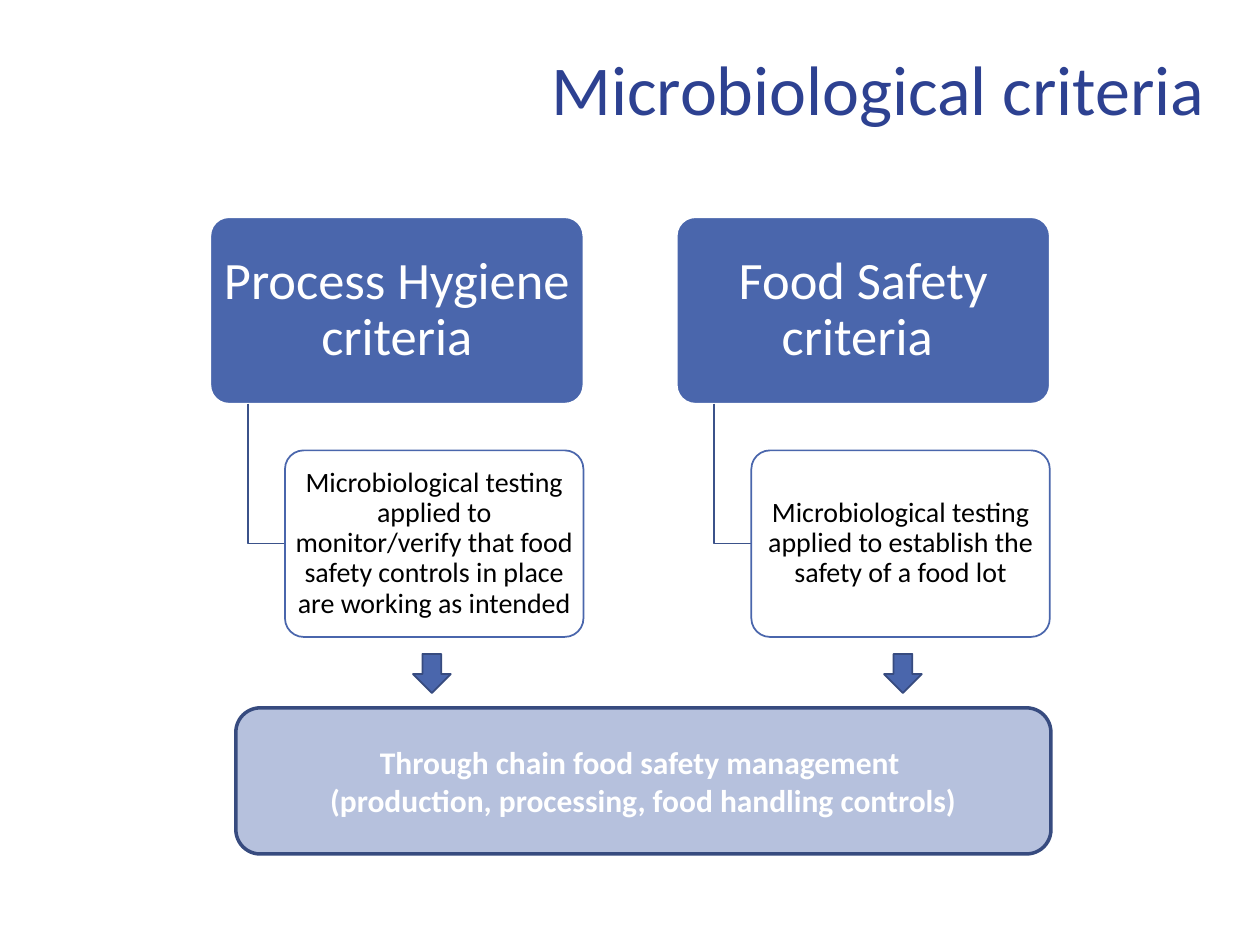
import pptx
import pptx.util
import pptx.dml.color
import pptx.enum.shapes
import pptx.enum.text
import pptx.oxml.ns
import lxml.etree

Pt = pptx.util.Pt
RGBColor = pptx.dml.color.RGBColor
SHAPES = pptx.enum.shapes.MSO_SHAPE
ANCHOR = pptx.enum.text.MSO_ANCHOR
ALIGN = pptx.enum.text.PP_ALIGN

BLUE = RGBColor(0x4A, 0x66, 0xAC)
DARK_BLUE = RGBColor(0x37, 0x4B, 0x7F)
BRANCH_BLUE = RGBColor(0x3B, 0x52, 0x8A)
TITLE_BLUE = RGBColor(0x2D, 0x41, 0x91)
WHITE = RGBColor(0xFF, 0xFF, 0xFF)
BLACK = RGBColor(0, 0, 0)


def add_block(kind, left, top, width, height, fill, line, weight=1, opacity=100):
    """Add a preset shape without shadow; opacity is in percent."""
    block = slide.shapes.add_shape(kind, Pt(left), Pt(top), Pt(width), Pt(height))
    block.shadow.inherit = False
    block.fill.solid()
    block.fill.fore_color.rgb = fill
    if opacity < 100:
        color = block.fill._xPr.find(".//" + pptx.oxml.ns.qn("a:srgbClr"))
        alpha = lxml.etree.SubElement(color, pptx.oxml.ns.qn("a:alpha"))
        alpha.set("val", str(opacity * 1000))
    block.line.color.rgb = line
    block.line.width = Pt(weight)
    return block


def write(box, lines, size, color, align=ALIGN.CENTER, spacing=0.9, bold=False,
          anchor=ANCHOR.MIDDLE, inset=(7.2, 3.6)):
    """Fill a box with one paragraph per line; inset is (sides, top and bottom)."""
    frame = box.text_frame
    frame.word_wrap = True
    frame.vertical_anchor = anchor
    frame.margin_left = frame.margin_right = Pt(inset[0])
    frame.margin_top = frame.margin_bottom = Pt(inset[1])
    for index, line in enumerate(lines):
        para = frame.add_paragraph() if index else frame.paragraphs[0]
        para.alignment = align
        para.line_spacing = spacing
        span = para.add_run()
        span.text = line
        span.font.name = "Calibri"
        span.font.size = Pt(size)
        span.font.bold = bold
        span.font.color.rgb = color


deck = pptx.Presentation()
deck.slide_width, deck.slide_height = Pt(720), Pt(540)
slide = deck.slides.add_slide(deck.slide_layouts[6])

# Two criteria, each with a hanging explanation
criteria = [
    ("Process Hygiene criteria",
     "Microbiological testing applied to monitor/verify that food safety "
     "controls in place are working as intended"),
    ("Food Safety criteria ",
     "Microbiological testing applied to establish the safety of a food lot"),
]
first_left, head_top = 120.2, 124.1
head_width = 213.2
height = head_width / 2
indent = head_width / 10
head_bottom = head_top + height
detail_top = head_bottom + height / 4
detail_middle = detail_top + height / 2

for column, (heading, detail) in enumerate(criteria):
    left = first_left + column * head_width * 1.25
    branch_left, detail_left = left + indent, left + 2 * indent

    head = add_block(SHAPES.ROUNDED_RECTANGLE, left, head_top, head_width, height,
                     BLUE, WHITE)
    head.adjustments[0] = 0.1
    write(head, [heading], 30, WHITE, inset=(4, 3))

    builder = slide.shapes.build_freeform(Pt(branch_left), Pt(head_bottom))
    builder.add_line_segments([(Pt(branch_left), Pt(detail_middle)),
                               (Pt(detail_left), Pt(detail_middle))], close=False)
    branch = builder.convert_to_shape()
    branch.shadow.inherit = False
    branch.fill.background()
    branch.line.color.rgb = BRANCH_BLUE
    branch.line.width = Pt(1)

    body = add_block(SHAPES.ROUNDED_RECTANGLE, detail_left, detail_top,
                     head_width * 0.8, height, WHITE, BLUE, opacity=90)
    body.adjustments[0] = 0.1
    write(body, [detail], 16, BLACK, inset=(2, 2))

# Both lead to the management of the whole chain
for arrow_left in (236, 505.2):
    add_block(SHAPES.DOWN_ARROW, arrow_left, 373.7, 21.6, 22.3, BLUE, DARK_BLUE)

management = add_block(SHAPES.ROUNDED_RECTANGLE, 134.8, 404.5, 465.8, 83.5,
                       BLUE, DARK_BLUE, weight=2, opacity=40)
write(management, ["Through chain food safety management ",
                   "(production, processing, food handling controls)"],
      18, WHITE, spacing=1.0, bold=True)

title = slide.shapes.add_textbox(Pt(74.6), Pt(28.1), Pt(620.6), Pt(104.4))
write(title, ["Microbiological criteria"], 40, TITLE_BLUE, align=ALIGN.RIGHT,
      anchor=ANCHOR.TOP)

deck.save("out.pptx")
